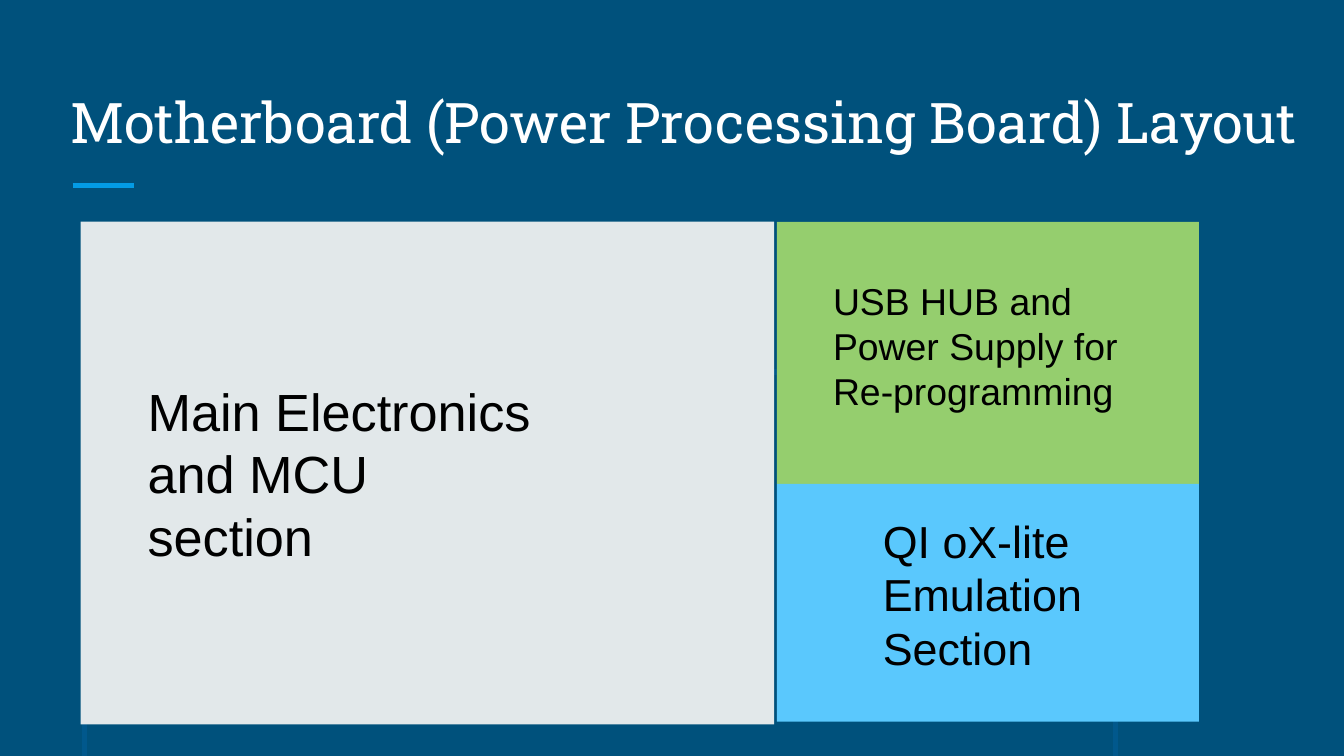
from lxml.etree import SubElement
from pptx import Presentation
from pptx.dml.color import RGBColor
from pptx.enum.shapes import MSO_CONNECTOR, MSO_SHAPE
from pptx.enum.text import MSO_ANCHOR, MSO_AUTO_SIZE, PP_ALIGN
from pptx.oxml.ns import qn
from pptx.util import Inches, Pt

NAVY = RGBColor(0x00, 0x51, 0x7C)
ACCENT = RGBColor(0x03, 0x9B, 0xE5)
FRAME = RGBColor(0x01, 0x58, 0x8C)
GREEN = RGBColor(0x95, 0xCE, 0x6E)
SKY = RGBColor(0x5A, 0xC8, 0xFD)
GREY = RGBColor(0xE2, 0xE8, 0xEA)
WHITE = RGBColor(0xFF, 0xFF, 0xFF)
BLACK = RGBColor(0x00, 0x00, 0x00)


def add_run(p, text, font, size, color):
    """Add one formatted run to a paragraph."""
    r = p.add_run()
    r.text = text
    r.font.name = font
    r.font.size = Pt(size)
    r.font.color.rgb = color


def set_title(s, text):
    """Place and format the slide title."""
    sp = s.shapes.title
    sp.left, sp.top, sp.width, sp.height = map(Inches, (0.19, 0.27, 9.8, 0.98))
    tf = sp.text_frame
    tf.word_wrap = True
    tf.auto_size = MSO_AUTO_SIZE.NONE
    tf.vertical_anchor = MSO_ANCHOR.BOTTOM
    tf.margin_left = tf.margin_right = Inches(0.1)
    tf.margin_top = tf.margin_bottom = Inches(0.1)
    p = tf.paragraphs[0]
    p.alignment = PP_ALIGN.CENTER
    add_run(p, text, "Roboto Slab", 30, WHITE)


def add_rule(s, x1, x2, y):
    """Draw the short accent line under the title."""
    line = s.shapes.add_connector(
        MSO_CONNECTOR.STRAIGHT, Inches(x1), Inches(y), Inches(x2), Inches(y))
    line.line.color.rgb = ACCENT
    line.line.width = Pt(3)
    SubElement(line._element.spPr, qn("a:effectLst"))


def add_rect(s, box, fill=None, line=None):
    """Draw a rectangle with an optional fill and outline."""
    sp = s.shapes.add_shape(MSO_SHAPE.RECTANGLE, *map(Inches, box))
    sp.shadow.inherit = False
    if fill is None:
        sp.fill.background()
    else:
        sp.fill.solid()
        sp.fill.fore_color.rgb = fill
    if line is None:
        sp.line.fill.background()
    else:
        sp.line.color.rgb = line
        sp.line.width = Pt(3)


def add_label(s, box, text, size):
    """Add a wrapped section label."""
    tf = s.shapes.add_textbox(*map(Inches, box)).text_frame
    tf.word_wrap = True
    tf.auto_size = MSO_AUTO_SIZE.SHAPE_TO_FIT_TEXT
    add_run(tf.paragraphs[0], text, "Arial", size, BLACK)


def main():
    """Build the board layout slide."""
    prs = Presentation()
    prs.slide_width = Inches(10)
    prs.slide_height = prs.slide_width * 9 // 16
    s = prs.slides.add_slide(prs.slide_layouts[5])
    s.background.fill.solid()
    s.background.fill.fore_color.rgb = NAVY

    add_rule(s, 0.54, 1, 1.38)
    set_title(s, "Motherboard (Power Processing Board) Layout")
    add_rect(s, (0.63, 2.77, 7.67, 3.32), line=FRAME)

    sections = [
        ((5.78, 1.65, 3.14, 1.95), GREEN, (6.1, 2.02, 2.56, 1.15),
         "USB HUB and Power Supply for Re-programming", 20),
        ((5.78, 3.6, 3.14, 1.77), SKY, (6.47, 3.77, 2.45, 1.31),
         "QI oX-lite Emulation Section", 24),
        ((0.6, 1.65, 5.16, 3.74), GREY, (1, 2.77, 3.05, 1.51),
         "Main Electronics and MCU section", 28),
    ]
    for box, fill, label_box, text, size in sections:
        add_rect(s, box, fill=fill)
        add_label(s, label_box, text, size)

    prs.save("out.pptx")


if __name__ == "__main__":
    main()
